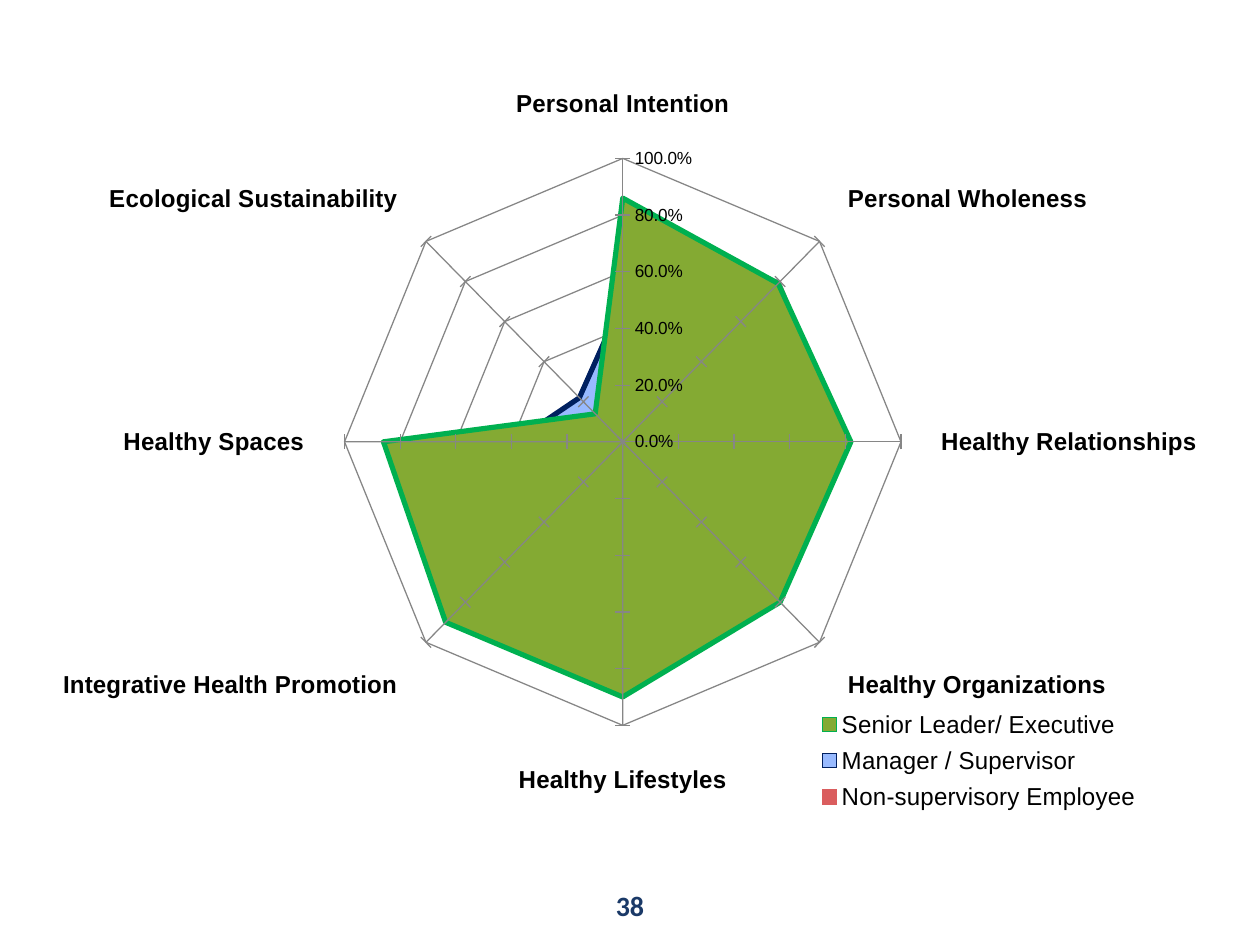
from dataclasses import dataclass

from lxml import etree
from pptx import Presentation
from pptx.chart.axis import _BaseAxis as Axis
from pptx.chart.chart import Chart
from pptx.chart.data import CategoryChartData
from pptx.dml.color import RGBColor
from pptx.enum.chart import XL_CHART_TYPE as ChartType
from pptx.enum.chart import XL_LEGEND_POSITION as LegendPosition
from pptx.enum.chart import XL_TICK_MARK as TickMark
from pptx.enum.text import PP_ALIGN as Align
from pptx.oxml.ns import qn
from pptx.slide import Slide
from pptx.util import Inches, Pt

BLACK = RGBColor(0x00, 0x00, 0x00)
GRAY = RGBColor(0x86, 0x86, 0x86)
NAVY = RGBColor(0x1A, 0x39, 0x67)
OLIVE = RGBColor(0x84, 0xAA, 0x33)
GREEN = RGBColor(0x00, 0xB0, 0x50)
LIGHT_BLUE = RGBColor(0x98, 0xBA, 0xFF)
DARK_BLUE = RGBColor(0x00, 0x20, 0x60)
RED = RGBColor(0xDA, 0x5D, 0x5E)


@dataclass(frozen=True)
class StaffGroup:
    name: str
    scores: tuple[float, ...]
    fill: RGBColor
    line: RGBColor


CATEGORIES = (
    "Personal Intention", "Personal Wholeness", "Healthy Relationships",
    "Healthy Organizations", "Healthy Lifestyles",
    "Integrative Health Promotion", "Healthy Spaces",
    "Ecological Sustainability",
)
STAFF_GROUPS = (
    StaffGroup("Senior Leader/ Executive",
               (0.86, 0.79, 0.82, 0.8, 0.9, 0.9, 0.86, 0.14), OLIVE, GREEN),
    StaffGroup("Manager / Supervisor",
               (0.5, 0.54, 0.42, 0.36, 0.47, 0.47, 0.39, 0.22),
               LIGHT_BLUE, DARK_BLUE),
    StaffGroup("Non-supervisory Employee",
               (0.42, 0.48, 0.54, 0.46, 0.4, 0.4, 0.38, 0.17), RED, RED),
)


def set_format(target: object, values: dict[str, object]) -> None:
    for name, value in values.items():
        setattr(target, name, value)


def set_font(font: object, color: RGBColor, **values: object) -> None:
    set_format(font, values)
    font.color.rgb = color


def set_layout(parent: object, position: int, box: dict[str, float],
               inner: bool = False) -> None:
    """Place a chart part by fractions of the chart's size."""
    for old_layout in parent.findall(qn("c:layout")):
        parent.remove(old_layout)
    layout = etree.Element(qn("c:layout"))
    manual = etree.SubElement(layout, qn("c:manualLayout"))
    settings = {"layoutTarget": "inner"} if inner else {}
    settings |= {"xMode": "edge", "yMode": "edge"} | box
    for tag, value in settings.items():
        etree.SubElement(manual, qn(f"c:{tag}")).set("val", str(value))
    parent.insert(position, layout)


def format_axis(axis: Axis, tick_mark: TickMark, size: int, bold: bool) -> None:
    set_format(axis, {"has_major_gridlines": True,
                      "major_tick_mark": tick_mark,
                      "minor_tick_mark": TickMark.NONE})
    for line in (axis.format.line, axis.major_gridlines.format.line):
        line.color.rgb = GRAY
        line.width = Pt(0.75)
    set_font(axis.tick_labels.font, BLACK, name="Arial", size=Pt(size), bold=bold)


def add_radar(slide: Slide) -> Chart:
    data = CategoryChartData(number_format="0.0%")
    data.categories = CATEGORIES
    for group in STAFF_GROUPS:
        data.add_series(group.name, group.scores)
    chart = slide.shapes.add_chart(
        ChartType.RADAR_FILLED, Inches(0.5), Inches(0.33),
        Inches(9), Inches(6.17), data).chart
    chart.has_title = False
    set_font(chart.font, BLACK, name="Arial", size=Pt(10))

    # Series colours
    for series, group in zip(chart.plots[0].series, STAFF_GROUPS):
        series.format.fill.solid()
        series.format.fill.fore_color.rgb = group.fill
        series.format.line.color.rgb = group.line
        series.format.line.width = Pt(3)

    # Axes and plot area
    format_axis(chart.category_axis, TickMark.OUTSIDE, 14, True)
    format_axis(chart.value_axis, TickMark.CROSS, 10, False)
    set_format(chart.value_axis, {"minimum_scale": 0, "maximum_scale": 1,
                                  "major_unit": 0.2})
    set_format(chart.value_axis.tick_labels,
               {"number_format": "0.0%", "number_format_is_linked": False})
    plot_area = chart.element.find(".//" + qn("c:plotArea")) \
        if hasattr(chart, "element") else chart._chartSpace.chart.plotArea
    set_layout(plot_area, 0, {"x": 0.24, "y": 0.12, "w": 0.5, "h": 0.79}, True)

    # Legend
    chart.has_legend = True
    set_format(chart.legend, {"position": LegendPosition.RIGHT,
                              "include_in_layout": False})
    set_font(chart.legend.font, BLACK, name="Arial", size=Pt(14))
    set_layout(chart.legend._element, 1,
               {"x": 0.66, "y": 0.85, "w": 0.3, "h": 0.15})
    return chart


def add_page_number(slide: Slide, number: str) -> None:
    box = slide.shapes.add_textbox(Inches(0), Inches(7), Inches(10), Inches(0.37))
    box.text_frame.word_wrap = True
    paragraph = box.text_frame.paragraphs[0]
    paragraph.alignment = Align.CENTER
    run = paragraph.add_run()
    run.text = number
    set_font(run.font, NAVY, name="Calibri", size=Pt(16), bold=True)


def main() -> None:
    presentation = Presentation()
    set_format(presentation, {"slide_width": Inches(10),
                              "slide_height": Inches(7.5)})
    slide = presentation.slides.add_slide(presentation.slide_layouts[6])
    add_radar(slide)
    add_page_number(slide, "38")
    presentation.save("out.pptx")


if __name__ == "__main__":
    main()
